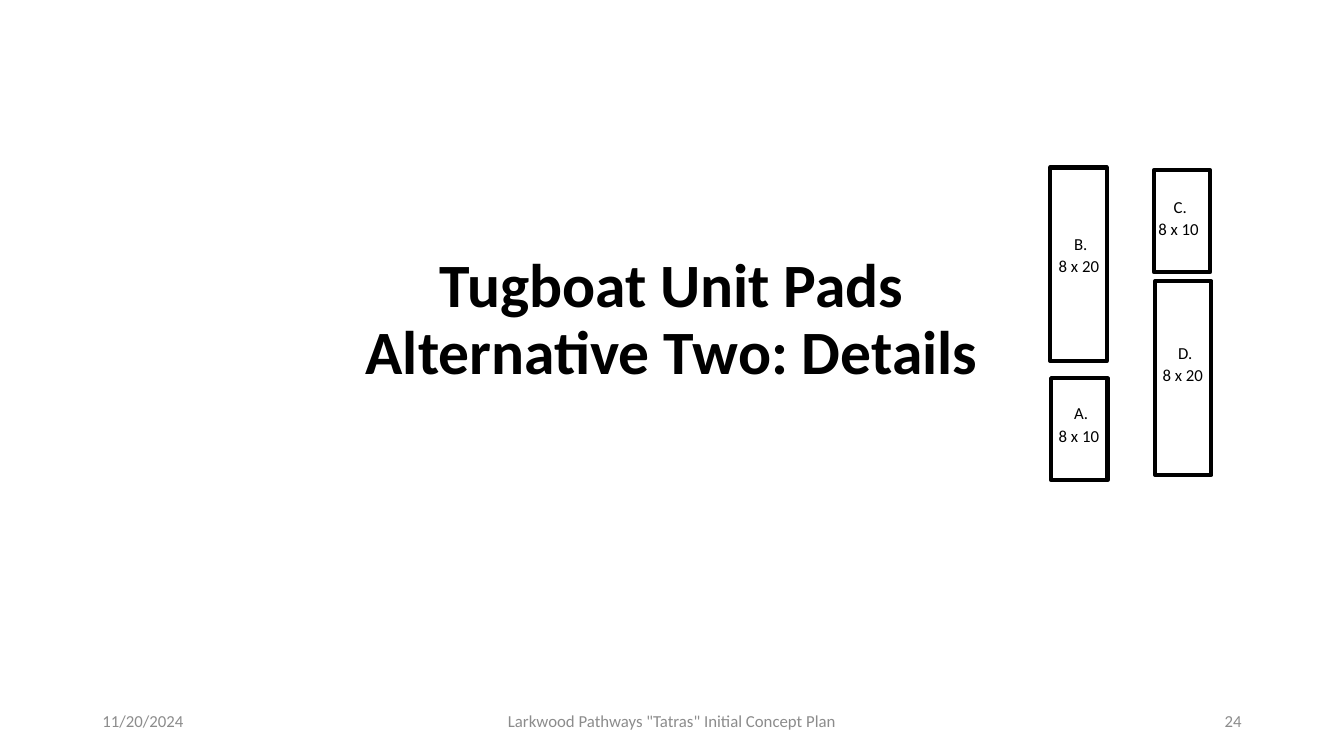
import pptx
import pptx.dml.color
import pptx.enum.shapes
import pptx.enum.text
import pptx.util

Cm = pptx.util.Cm
Pt = pptx.util.Pt
ALIGN = pptx.enum.text.PP_ALIGN
ANCHOR = pptx.enum.text.MSO_ANCHOR
COLORS = {"ink": "000000", "footer": "8C8C8C"}


def write(box, text, size=12, color="ink", bold=False, align=ALIGN.LEFT,
          anchor=ANCHOR.MIDDLE, spacing=1.0):
    """Fill a box with text, one paragraph per line, in one format."""
    frame = box.text_frame
    frame.word_wrap = True
    frame.auto_size = pptx.enum.text.MSO_AUTO_SIZE.NONE
    frame.vertical_anchor = anchor
    frame.text = text
    for para in frame.paragraphs:
        para.alignment = align
        para.line_spacing = spacing
        for span in para.runs:
            span.font.name = "Calibri"
            span.font.size = Pt(size)
            span.font.bold = bold
            span.font.color.rgb = pptx.dml.color.RGBColor.from_string(COLORS[color])
    return frame


deck = pptx.Presentation()
deck.slide_width = Cm(33.87)
deck.slide_height = Cm(19.05)
page = deck.slides.add_slide(deck.slide_layouts[5])

# Title
title = page.shapes.title
title.left, title.top, title.width, title.height = Cm(2.33), Cm(6.25), Cm(29.21), Cm(3.68)
write(title, "Tugboat Unit Pads\vAlternative Two: Details", size=44, bold=True,
      align=ALIGN.CENTER, spacing=0.9)

# Footer
footers = [
    ("11/20/2024", 2.33, 7.62, ALIGN.LEFT),
    ('Larkwood Pathways "Tatras" Initial Concept Plan', 11.22, 11.43, ALIGN.CENTER),
    ("24", 23.92, 7.62, ALIGN.RIGHT),
]
for text, left, width, align in footers:
    box = page.shapes.add_textbox(Cm(left), Cm(17.65), Cm(width), Cm(1.01))
    write(box, text, color="footer", align=align)

# Unit pads: letter, length in feet, pad left and top, label left and top
pad_heights = {10: 2.57, 20: 4.88}
pads = [
    ("A", 10, 26.49, 9.53, 25.96, 9.83),
    ("B", 20, 26.47, 4.22, 25.96, 5.56),
    ("C", 10, 29.08, 4.29, 28.47, 4.62),
    ("D", 20, 29.11, 7.09, 28.58, 8.31),
]
for letter, length, left, top, label_left, label_top in pads:
    pad = page.shapes.add_shape(pptx.enum.shapes.MSO_SHAPE.RECTANGLE, Cm(left), Cm(top),
                                Cm(1.42), Cm(pad_heights[length]))
    pad.shadow.inherit = False
    pad.fill.background()
    pad.line.color.rgb = pptx.dml.color.RGBColor.from_string(COLORS["ink"])
    pad.line.width = Pt(3)

    label = page.shapes.add_textbox(Cm(label_left), Cm(label_top), Cm(2.46), Cm(1.55))
    frame = write(label, f"{letter}.\n8 x {length}", anchor=ANCHOR.TOP)
    frame.margin_top = Cm(0.33)
    name, measure = frame.paragraphs
    name._p.get_or_add_pPr().set("indent", str(Cm(0.86)))
    name.space_after = Pt(1.5)
    measure.alignment = ALIGN.CENTER

deck.save("out.pptx")
